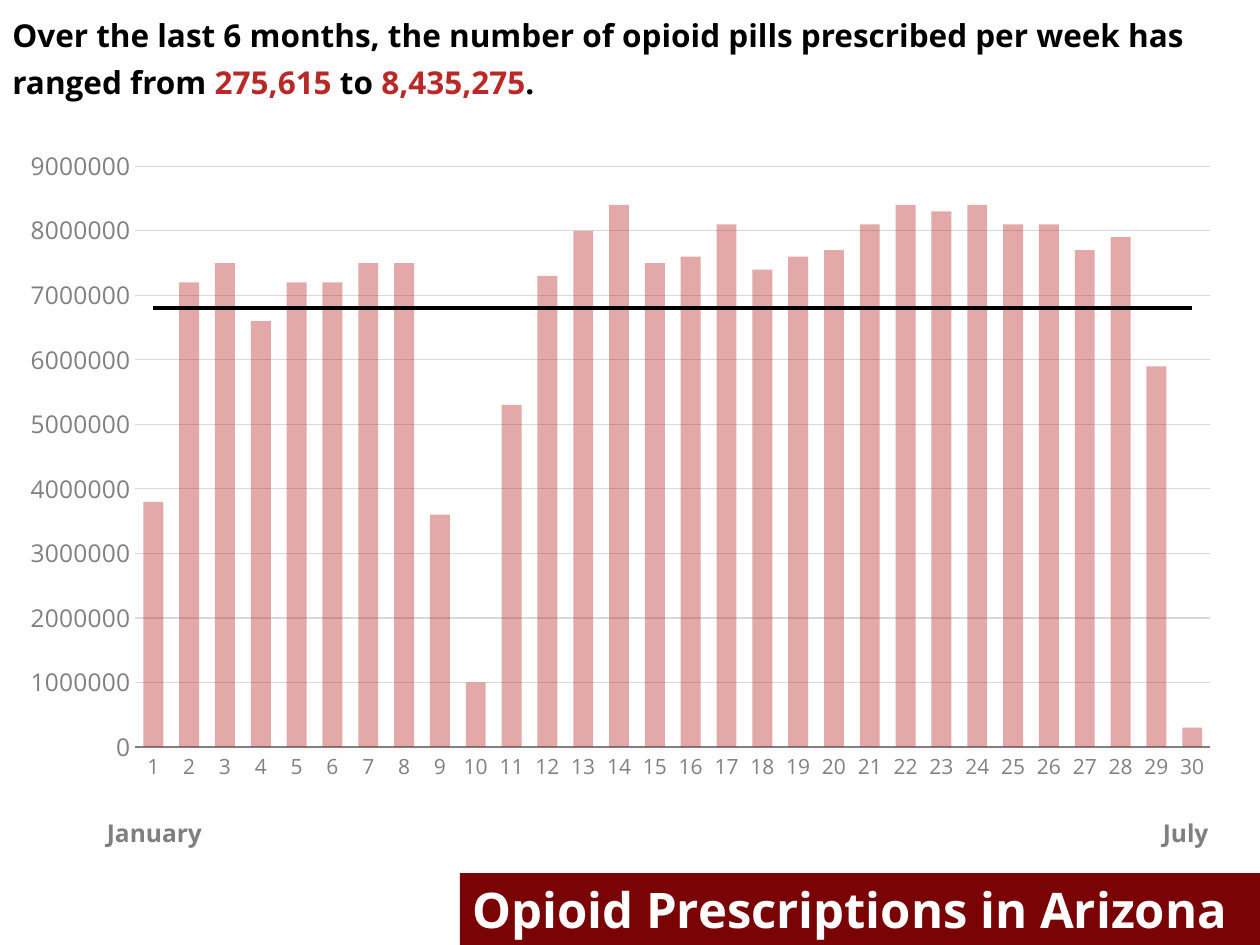
from lxml.etree import SubElement
from pptx import Presentation
from pptx.chart.data import CategoryChartData
from pptx.dml.color import RGBColor
from pptx.enum.chart import XL_CHART_TYPE, XL_TICK_MARK
from pptx.enum.shapes import MSO_SHAPE
from pptx.enum.text import MSO_ANCHOR, PP_ALIGN
from pptx.oxml import parse_xml
from pptx.oxml.ns import nsdecls, qn
from pptx.util import Inches, Pt

FONT = "Open Sans"
COLORS = {
    "black": "000000", "white": "FFFFFF", "red": "B82927", "maroon": "7A0306",
    "label": "7F7F7F", "axis": "808080", "grid": "D9D9D9",
}

HEADLINE = [
    ("Over the last 6 months, the number of opioid pills prescribed per week has ranged from ", "black"),
    ("275,615", "red"),
    (" to ", "black"),
    ("8,435,275", "red"),
    (".", "black"),
]
TEXT_BOXES = [
    ((7.5, 85.87, 10, 4.53), [("January", "label")], 14, 1),
    ((91.3, 85.87, 7.5, 4.53), [("July", "label")], 14, 1),
    ((0, 0, 98.3, 11.47), HEADLINE, 18, 1.25),
]
BANNER = ((36.5, 92.4, 63.5, 7.6), [("Opioid Prescriptions in Arizona", "white")], 28, 1)

CHART_AREA = (0.4, 14.4, 97.6, 69.6)
PLOT_PERCENT = {"x": 10.6, "y": 4.6, "w": 87.4, "h": 88.3}
WEEKLY_MILLIONS = [
    3.8, 7.2, 7.5, 6.6, 7.2, 7.2, 7.5, 7.5, 3.6, 1.0,
    5.3, 7.3, 8.0, 8.4, 7.5, 7.6, 8.1, 7.4, 7.6, 7.7,
    8.1, 8.4, 8.3, 8.4, 8.1, 8.1, 7.7, 7.9, 5.9, 0.3,
]
AVERAGE_MILLIONS = 6.8
MILLION = 1_000_000


def color(name):
    return RGBColor.from_string(COLORS[name])


def place(deck, area):
    sides = (deck.slide_width, deck.slide_height) * 2
    return [round(side * share / 100) for side, share in zip(sides, area)]


def write(shape, runs, size, spacing):
    frame = shape.text_frame
    frame.word_wrap = True
    para = frame.paragraphs[0]
    para.alignment = PP_ALIGN.LEFT
    para.line_spacing = spacing
    for text, shade in runs:
        span = para.add_run()
        span.text = text
        span.font.name = FONT
        span.font.size = Pt(size)
        span.font.bold = True
        span.font.color.rgb = color(shade)


def style_axis(axis, size):
    axis.major_tick_mark = axis.minor_tick_mark = XL_TICK_MARK.NONE
    font = axis.tick_labels.font
    font.name = FONT
    font.size = Pt(size)
    font.color.rgb = color("axis")


def add_child(parent, tag, value):
    SubElement(parent, qn(tag)).set("val", str(value))


def set_plot_layout(plot_area):
    for layout in plot_area.findall(qn("c:layout")):
        plot_area.remove(layout)
    layout = parse_xml(f"<c:layout {nsdecls('c')}><c:manualLayout/></c:layout>")
    manual = layout[0]
    add_child(manual, "c:layoutTarget", "inner")
    for side in "xy":
        add_child(manual, f"c:{side}Mode", "edge")
    for side, percent in PLOT_PERCENT.items():
        add_child(manual, f"c:{side}", percent / 100)
    plot_area.insert(0, layout)


def move_to_line_plot(bar_plot, series):
    for inversion in series.findall(qn("c:invertIfNegative")):
        series.remove(inversion)
    marker = parse_xml(f'<c:marker {nsdecls("c")}><c:symbol val="none"/></c:marker>')
    series.find(qn("c:cat")).addprevious(marker)
    add_child(series, "c:smooth", 0)
    line_plot = parse_xml(
        f'<c:lineChart {nsdecls("c")}><c:grouping val="standard"/>'
        '<c:varyColors val="0"/></c:lineChart>'
    )
    line_plot.append(series)
    add_child(line_plot, "c:marker", 1)
    for axis in bar_plot.findall(qn("c:axId")):
        add_child(line_plot, "c:axId", axis.get("val"))
    bar_plot.addnext(line_plot)


def add_prescription_chart(deck, page):
    data = CategoryChartData(number_format="0")
    data.categories = [str(week + 1) for week in range(len(WEEKLY_MILLIONS))]
    data.add_series("Series 1", [round(value * MILLION) for value in WEEKLY_MILLIONS])
    data.add_series("Series 2", [round(AVERAGE_MILLIONS * MILLION)] * len(WEEKLY_MILLIONS))
    chart = page.shapes.add_chart(
        XL_CHART_TYPE.COLUMN_CLUSTERED, *place(deck, CHART_AREA), data
    ).chart
    chart.has_legend = chart.has_title = False
    chart.font.name = FONT
    chart.font.size = Pt(18)
    chart.font.color.rgb = color("black")

    style_axis(chart.category_axis, 12)
    chart.category_axis.format.line.color.rgb = color("axis")
    values = chart.value_axis
    style_axis(values, 14)
    values.minimum_scale, values.maximum_scale, values.major_unit = 0, 9 * MILLION, MILLION
    values.tick_labels.number_format = "0"
    values.tick_labels.number_format_is_linked = False
    values.format.line.fill.background()
    values.major_gridlines.format.line.color.rgb = color("grid")
    values.major_gridlines.format.line.width = Pt(0.75)

    plot = chart.plots[0]
    plot.gap_width = 80
    plot.vary_by_categories = False
    weekly, average = plot.series
    weekly.invert_if_negative = False
    weekly.format.fill.solid()
    weekly.format.fill.fore_color.rgb = color("red")
    average.format.line.color.rgb = color("black")
    average.format.line.width = Pt(2.25)

    bar_plot = next(chart.element.iter(qn("c:barChart")))
    move_to_line_plot(bar_plot, bar_plot.findall(qn("c:ser"))[1])
    for shade in bar_plot.iter(qn("a:srgbClr")):
        add_child(shade, "a:alpha", 40000)
    set_plot_layout(bar_plot.getparent())


def main():
    deck = Presentation()
    deck.slide_width, deck.slide_height = Inches(10), Inches(7.5)
    page = deck.slides.add_slide(deck.slide_layouts[6])

    area, *content = BANNER
    banner = page.shapes.add_shape(MSO_SHAPE.RECTANGLE, *place(deck, area))
    banner.shadow.inherit = False
    banner.fill.solid()
    banner.fill.fore_color.rgb = color("maroon")
    banner.line.fill.background()
    banner.text_frame.vertical_anchor = MSO_ANCHOR.MIDDLE
    write(banner, *content)

    for area, *content in TEXT_BOXES:
        write(page.shapes.add_textbox(*place(deck, area)), *content)
    add_prescription_chart(deck, page)
    deck.save("out.pptx")


if __name__ == "__main__":
    main()
